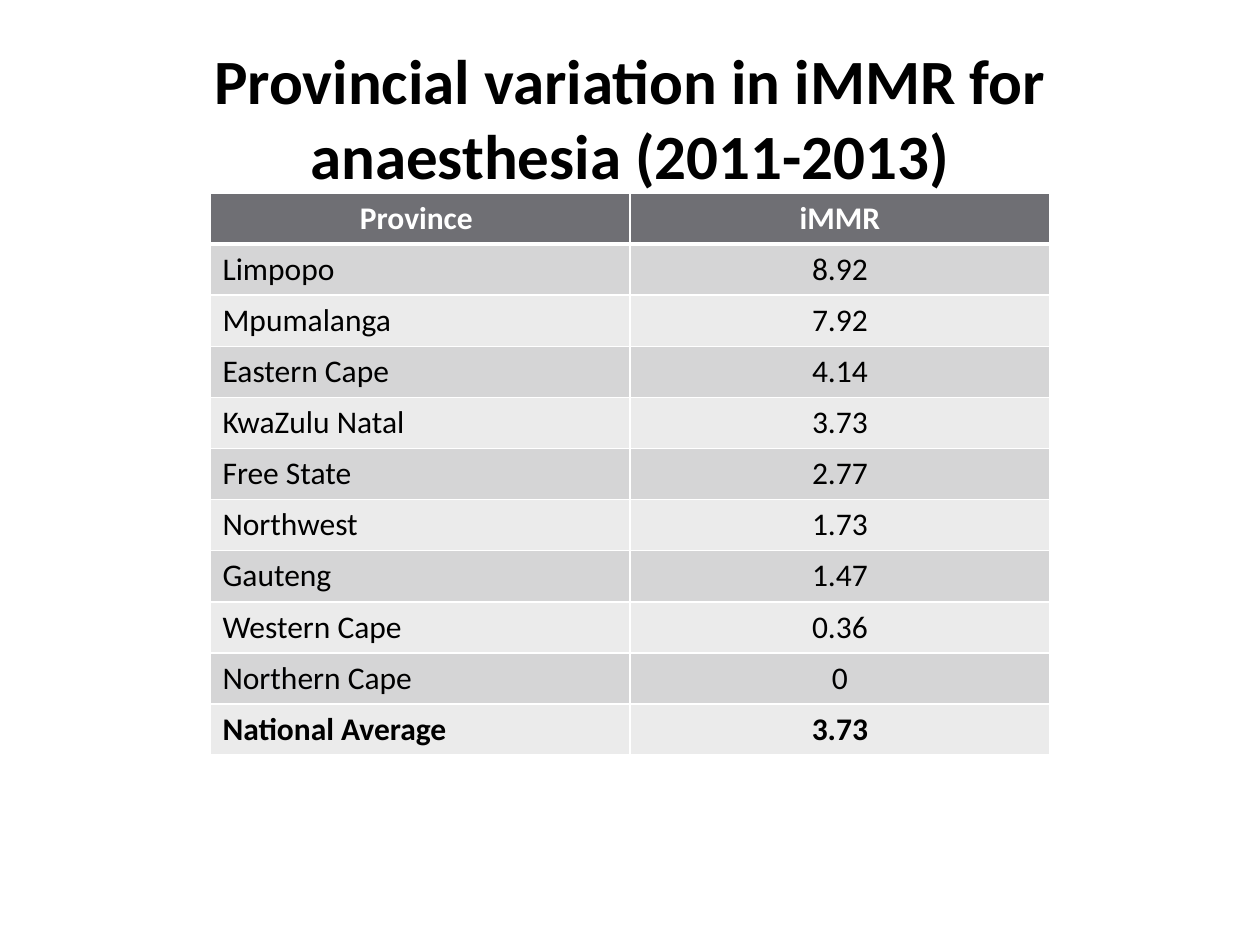
from dataclasses import dataclass
from typing import NamedTuple

from lxml import etree
from pptx import Presentation
from pptx.dml.color import RGBColor
from pptx.enum.text import MSO_ANCHOR, MSO_AUTO_SIZE, PP_ALIGN
from pptx.oxml.ns import qn
from pptx.util import Emu, Pt

LEFT, CENTER = PP_ALIGN.LEFT, PP_ALIGN.CENTER
MIDDLE = MSO_ANCHOR.MIDDLE
NO_AUTOFIT = MSO_AUTO_SIZE.NONE
PX_PER_INCH = 126


@dataclass(frozen=True)
class Theme:
    font: str = "Calibri"
    title_size: int = 36
    table_size: int = 18
    ink: str = "000000"
    white: str = "FFFFFF"
    header: str = "6F6F74"
    bands: tuple[str, str] = ("D5D5D6", "EBEBEB")
    thin: int = 1
    thick: int = 3


class ProvinceRate(NamedTuple):
    province: str
    rate: str


THEME = Theme()
TITLE = "Provincial variation in iMMR for anaesthesia (2011-2013)"
HEADER = ProvinceRate("Province ", "iMMR")
RATES = [
    ProvinceRate("Limpopo", "8.92"),
    ProvinceRate("Mpumalanga", "7.92"),
    ProvinceRate("Eastern Cape", "4.14"),
    ProvinceRate("KwaZulu Natal", "3.73"),
    ProvinceRate("Free State", "2.77"),
    ProvinceRate("Northwest", "1.73"),
    ProvinceRate("Gauteng", "1.47"),
    ProvinceRate("Western Cape", "0.36"),
    ProvinceRate("Northern Cape", "0"),
    ProvinceRate("National Average", "3.73"),
]


def px(length: int) -> Emu:
    return Emu(round(length * 914400 / PX_PER_INCH))


def write(frame, text: str, size: int, color: str, bold: bool, align) -> None:
    frame.text = text
    para = frame.paragraphs[0]
    para.alignment = align
    para.font.name = THEME.font
    para.font.size = Pt(size)
    para.font.bold = bold
    para.font.color.rgb = RGBColor.from_string(color)


def set_borders(cell, top: int, bottom: int) -> None:
    """Draw white cell edges; the lines must come before the fill in the XML."""
    properties = cell._tc.get_or_add_tcPr()
    widths = {"lnL": THEME.thin, "lnR": THEME.thin, "lnT": top, "lnB": bottom}
    for index, (edge, width) in enumerate(widths.items()):
        line = etree.Element(qn(f"a:{edge}"), w=str(Pt(width)))
        fill = etree.SubElement(line, qn("a:solidFill"))
        etree.SubElement(fill, qn("a:srgbClr"), val=THEME.white)
        properties.insert(index, line)


def add_title(page) -> None:
    title = page.shapes.title
    title.left, title.top, title.width, title.height = map(px, (63, 38, 1134, 158))
    frame = title.text_frame
    write(frame, TITLE, THEME.title_size, THEME.ink, True, CENTER)
    frame.word_wrap = True
    frame.auto_size = NO_AUTOFIT
    frame.vertical_anchor = MIDDLE


def add_rate_table(page) -> None:
    rows = [HEADER, *RATES]
    row_height = 51
    table = page.shapes.add_table(
        len(rows), len(HEADER), px(210), px(193), px(840), px(row_height * len(rows))
    ).table
    for row_index, record in enumerate(rows):
        table.rows[row_index].height = px(row_height)
        is_header = row_index == 0
        bold = is_header or record is RATES[-1]
        fill = THEME.header if is_header else THEME.bands[(row_index - 1) % 2]
        color = THEME.white if is_header else THEME.ink
        top = THEME.thick if row_index == 1 else THEME.thin
        bottom = THEME.thick if is_header else THEME.thin
        for column, text in enumerate(record):
            cell = table.cell(row_index, column)
            align = CENTER if is_header or column else LEFT
            write(cell.text_frame, text, THEME.table_size, color, bold, align)
            cell.fill.solid()
            cell.fill.fore_color.rgb = RGBColor.from_string(fill)
            set_borders(cell, top, bottom)


def main() -> None:
    deck = Presentation()
    deck.slide_width, deck.slide_height = px(1260), px(945)
    page = deck.slides.add_slide(deck.slide_layouts.get_by_name("Title Only"))
    add_title(page)
    add_rate_table(page)
    deck.save("out.pptx")


if __name__ == "__main__":
    main()
